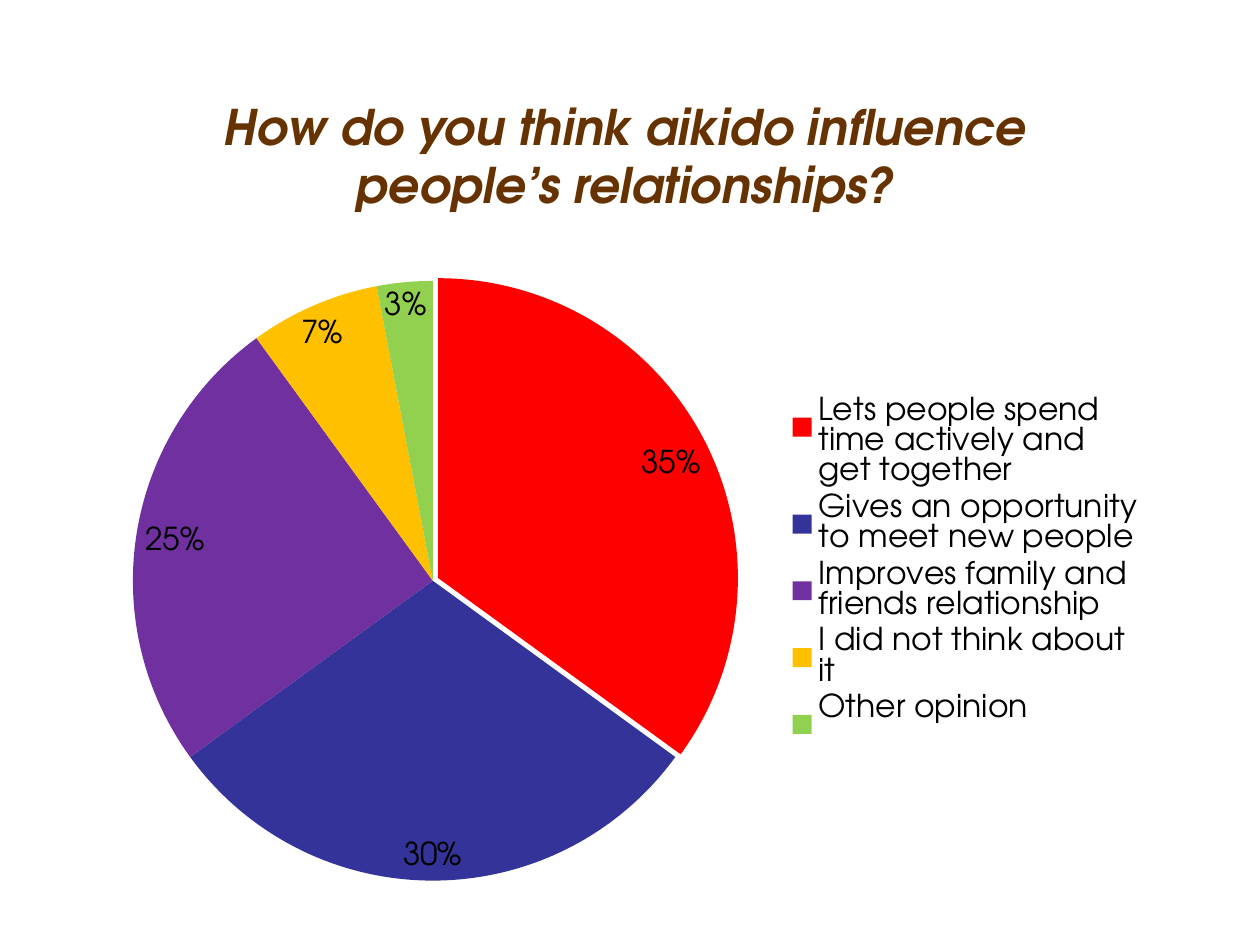
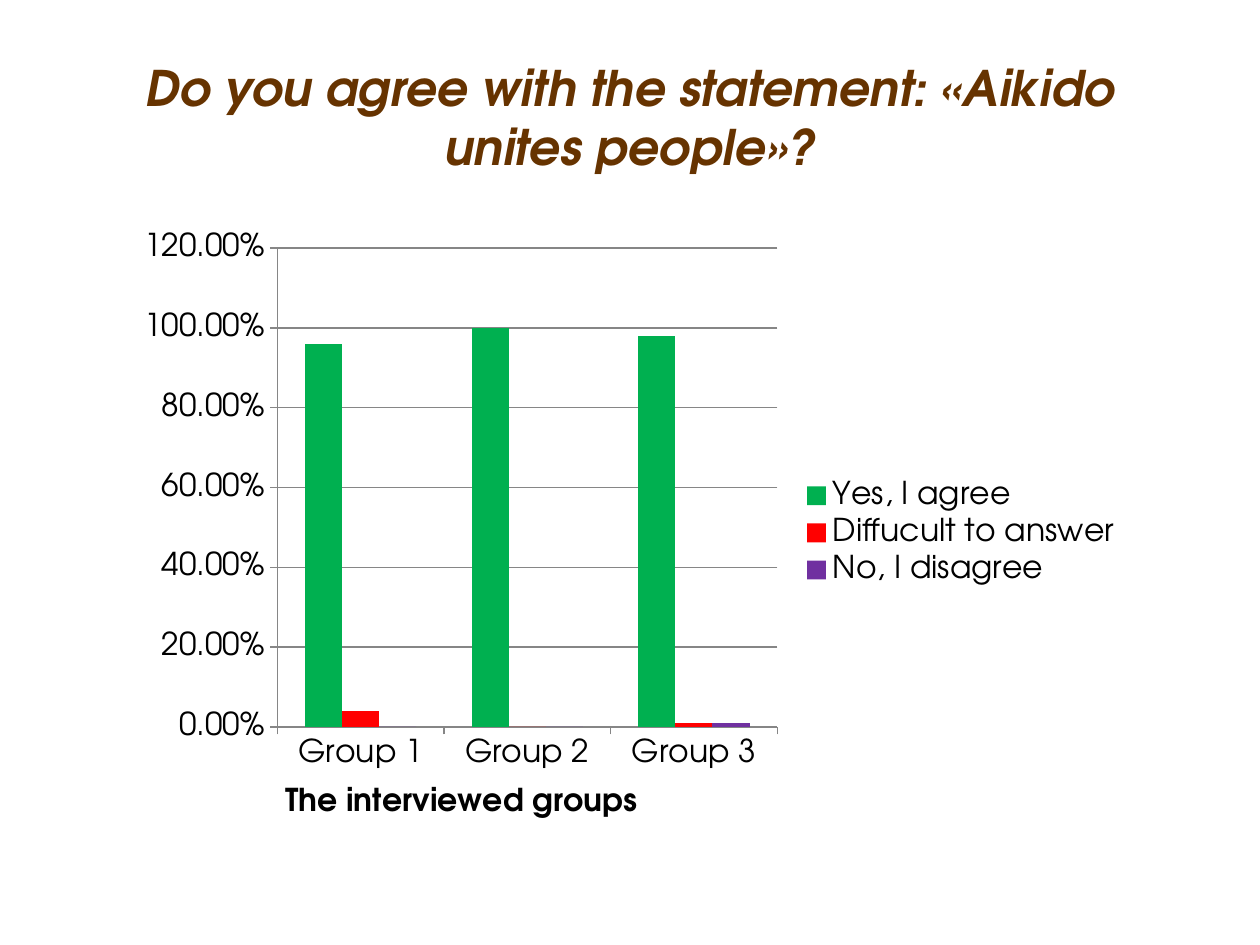
from dataclasses import dataclass

from lxml import etree
from pptx import Presentation
from pptx.chart import data as chart_data
from pptx.dml.color import RGBColor
from pptx.enum import chart as ch, text
from pptx.oxml import ns
from pptx.util import Inches, Pt


@dataclass(frozen=True)
class Theme:
    font: str = "TeX Gyre Adventor"
    title_size: int = 28
    chart_size: int = 18
    rule: float = 0.75
    title: str = "663300"
    ink: str = "000000"
    grid: str = "868686"
    red: str = "FF0000"
    blue: str = "333399"
    purple: str = "7030A0"
    amber: str = "FFC000"
    lime: str = "92D050"
    green: str = "00B050"


THEME = Theme()


# Formatting helpers
def style_font(font, size=THEME.chart_size, color=THEME.ink, bold=False, italic=False):
    font.name, font.size = THEME.font, Pt(size)
    font.bold, font.italic = bold, italic
    font.color.rgb = RGBColor.from_string(color)


def write(frame, words, align=None, **font_format):
    frame.text = words
    paragraph = frame.paragraphs[0]
    paragraph.alignment = align
    style_font(paragraph.runs[0].font, **font_format)


def paint(part, color):
    part.format.fill.solid()
    part.format.fill.fore_color.rgb = RGBColor.from_string(color)


def rule(part):
    part.format.line.color.rgb = RGBColor.from_string(THEME.grid)
    part.format.line.width = Pt(THEME.rule)


def place(part, chart_box, x, y, w=None, h=None, inner=False):
    """Lay out a chart part, in inches from the chart's top left corner."""
    for old in part.findall(ns.qn("c:layout")):
        part.remove(old)
    lead = [e for e in part if e.tag in (ns.qn("c:tx"), ns.qn("c:legendPos"))]
    layout = etree.Element(ns.qn("c:layout"))
    part.insert(len(lead), layout)
    manual = etree.SubElement(layout, ns.qn("c:manualLayout"))
    modes = [("layoutTarget", "inner")] if inner else []
    modes += [("xMode", "edge"), ("yMode", "edge")]
    width, height = chart_box[2:]
    lengths = [("x", x, width), ("y", y, height), ("w", w, width), ("h", h, height)]
    shares = [(name, length / whole) for name, length, whole in lengths
              if length is not None]
    for name, value in modes + shares:
        etree.SubElement(manual, ns.qn(f"c:{name}")).set("val", str(value))


# Shared slide parts
def add_titled_slide(deck, words, box):
    slide = deck.slides.add_slide(deck.slide_layouts[5])
    title = slide.shapes.title
    title.left, title.top, title.width, title.height = map(Inches, box)
    title.text_frame.vertical_anchor = text.MSO_ANCHOR.MIDDLE
    write(title.text_frame, words, align=text.PP_ALIGN.CENTER,
          size=THEME.title_size, color=THEME.title, bold=True, italic=True)
    return slide


def add_survey_chart(slide, kind, box, answers, plot_box, legend_box):
    chart = slide.shapes.add_chart(kind, *map(Inches, box), answers).chart
    style_font(chart.font)
    chart.has_title = False
    chart.has_legend = True
    chart.legend.position = ch.XL_LEGEND_POSITION.RIGHT
    chart.legend.include_in_layout = False
    style_font(chart.legend.font)
    plot_area = chart.plots[0]._element.getparent()
    place(plot_area, box, *plot_box, inner=True)
    place(chart.legend._element, box, *legend_box)
    return chart


# Pie of opinions
def add_opinion_pie(slide, box):
    opinions = [
        ("Lets people spend time actively and get together", 35, THEME.red),
        ("Gives an opportunity to meet new people", 30, THEME.blue),
        ("Improves family and friends relationship", 25, THEME.purple),
        ("I did not think about it", 7, THEME.amber),
        ("Other opinion", 3, THEME.lime),
    ]
    names, shares, colors = zip(*opinions)
    answers = chart_data.CategoryChartData()
    answers.categories = names
    answers.add_series("Series 1", shares)
    chart = add_survey_chart(slide, ch.XL_CHART_TYPE.PIE, box, answers,
                             (0.34, 0.45, 4.85, 4.76), (5.62, 1.32, 2.8, 2.7))
    pie = chart.plots[0]
    pie.vary_by_categories = True
    points = pie.series[0].points
    for index, color in enumerate(colors):
        paint(points[index], color)

    # Leading answer pulled slightly out of the pie
    leading = pie.series[0]._element.find(ns.qn("c:dPt"))
    explosion = etree.Element(ns.qn("c:explosion"), val="2")
    leading.find(ns.qn("c:spPr")).addprevious(explosion)

    pie.has_data_labels = True
    labels = pie.data_labels
    labels.show_percentage, labels.show_value = True, False
    labels.number_format, labels.number_format_is_linked = "0%", False
    labels.position = ch.XL_LABEL_POSITION.BEST_FIT
    style_font(labels.font)


# Columns of agreement by group
def style_axis(axis):
    style_font(axis.tick_labels.font)
    rule(axis)
    axis.major_tick_mark = ch.XL_TICK_MARK.OUTSIDE


def add_agreement_columns(slide, box):
    replies = [
        ("Yes, I agree", (0.96, 1, 0.98), THEME.green),
        ("Diffucult to answer", (0.04, 0, 0.01), THEME.red),
        ("No, I disagree", (0, 0, 0.01), THEME.purple),
    ]
    answers = chart_data.CategoryChartData(number_format="0.00%")
    answers.categories = [f"Group {number}" for number in (1, 2, 3)]
    for name, shares, _ in replies:
        answers.add_series(name, shares)
    chart = add_survey_chart(slide, ch.XL_CHART_TYPE.COLUMN_CLUSTERED, box, answers,
                             (1.22, 0.22, 3.97, 3.8), (5.36, 2.01, 2.57, 0.94))
    columns = chart.plots[0]
    columns.vary_by_categories = False
    columns.gap_width, columns.overlap = 150, 0
    for series, (_, _, color) in zip(columns.series, replies):
        paint(series, color)

    groups, shares = chart.category_axis, chart.value_axis
    style_axis(groups)
    style_axis(shares)
    write(groups.axis_title.text_frame, "The interviewed groups", bold=True)
    place(groups.axis_title._element, box, 1.24, 4.43)
    shares.minimum_scale, shares.maximum_scale, shares.major_unit = 0, 1.2, 0.2
    shares.tick_labels.number_format = "0.00%"
    shares.tick_labels.number_format_is_linked = False
    shares.has_major_gridlines = True
    rule(shares.major_gridlines)


def main():
    deck = Presentation()
    deck.slide_width, deck.slide_height = Inches(10), Inches(7.5)

    influence = add_titled_slide(
        deck, "How do you think aikido influence people’s relationships?",
        (0.98, 0.91, 7.96, 0.64))
    add_opinion_pie(influence, (0.67, 1.78, 8.5, 5.39))

    unity = add_titled_slide(
        deck, "Do you agree with the statement: «Aikido unites people»?",
        (0.5, 0.3, 9, 1.25))
    add_agreement_columns(unity, (0.98, 1.75, 8.03, 4.95))

    deck.save("out.pptx")


if __name__ == "__main__":
    main()
